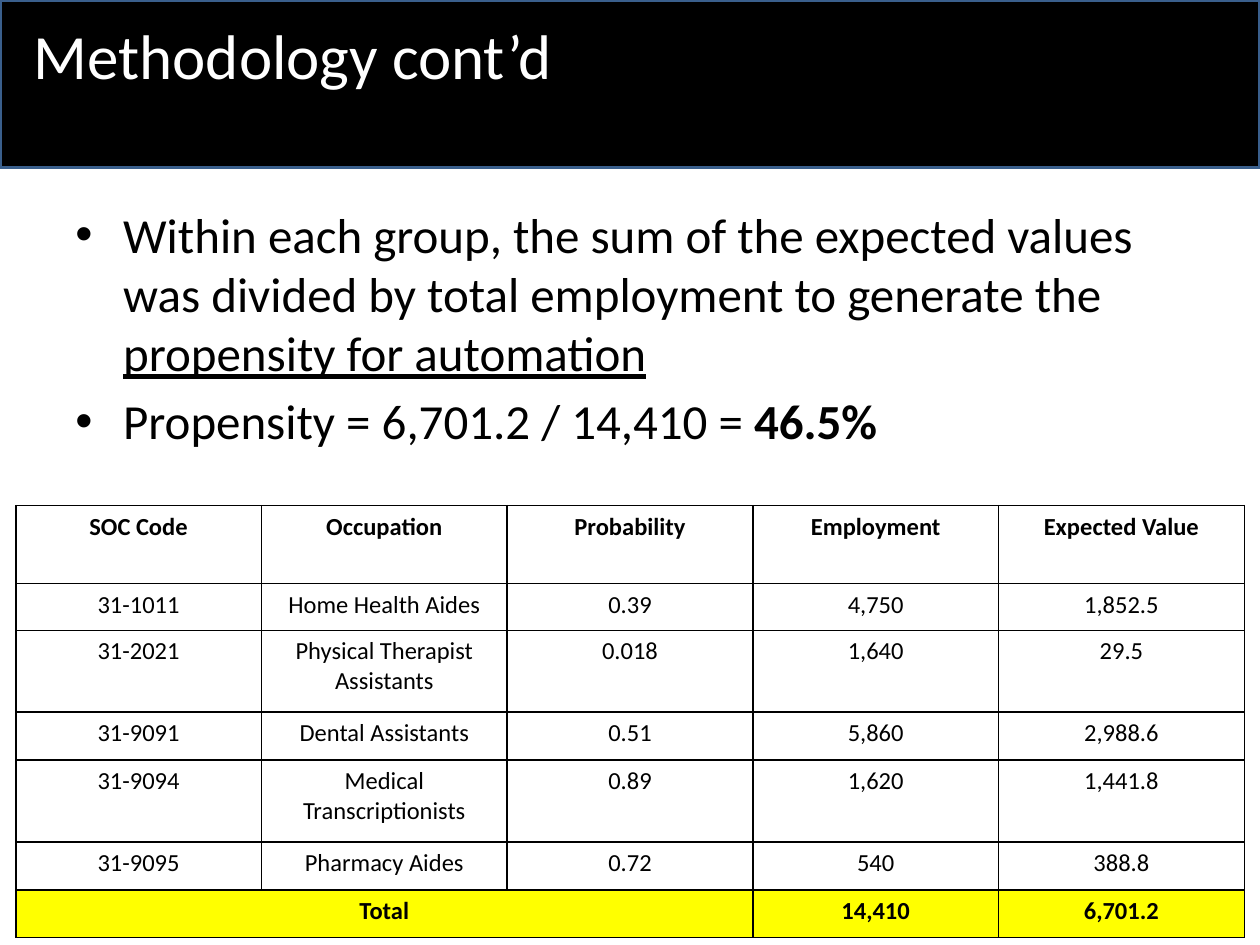
from lxml.etree import SubElement
from pptx import Presentation
from pptx.dml.color import RGBColor
from pptx.enum.shapes import MSO_SHAPE
from pptx.enum.text import PP_ALIGN
from pptx.oxml.ns import qn
from pptx.util import Inches, Pt

WIDTH, HEIGHT = 10, 7.5
BLACK, WHITE, YELLOW, BLUE = "000000", "FFFFFF", "FFFF00", "3A5F8C"
ROW_HEIGHTS = [0.62, 0.37, 0.65, 0.38, 0.65, 0.38, 0.38]
ROWS = [
    ["SOC Code", "Occupation", "Probability", "Employment", "Expected Value"],
    ["31-1011", "Home Health Aides", "0.39", "4,750", "1,852.5"],
    ["31-2021", "Physical Therapist Assistants", "0.018", "1,640", "29.5"],
    ["31-9091", "Dental Assistants", "0.51", "5,860", "2,988.6"],
    ["31-9094", "Medical Transcriptionists", "0.89", "1,620", "1,441.8"],
    ["31-9095", "Pharmacy Aides", "0.72", "540", "388.8"],
    ["", "Total", "", "14,410", "6,701.2"],
]
BULLETS = [
    [("Within each group, the sum of the expected values was divided by total "
      "employment to generate the ", None), ("propensity for automation", "underline")],
    [("Propensity = 6,701.2 / 14,410 = ", None), ("46.5%", "bold")],
]


def color(value):
    """Turn a hex string into a colour."""
    return RGBColor.from_string(value)


def place(left, top, width, height):
    """Turn shares of the slide's size into lengths."""
    return (Inches(left * WIDTH), Inches(top * HEIGHT),
            Inches(width * WIDTH), Inches(height * HEIGHT))


def style(font, size, value, bold=False):
    """Set the typeface, size, colour and weight of a font."""
    font.name, font.size, font.bold = "Calibri", Pt(size), bold
    font.color.rgb = color(value)


def add_text(page, box):
    """Add a wrapping text box and return its frame."""
    frame = page.shapes.add_textbox(*place(*box)).text_frame
    frame.word_wrap = True
    return frame


def add_header(page, box):
    """Draw the title band and the title inside it."""
    left, top, width, height = box
    band = page.shapes.add_shape(MSO_SHAPE.RECTANGLE, *place(*box))
    band.shadow.inherit = False
    band.fill.solid()
    band.fill.fore_color.rgb = color(BLACK)
    band.line.color.rgb = color(BLUE)
    band.line.width = Pt(2)
    frame = add_text(page, (left + width * 0.017, top + height * 0.06,
                            width * 0.825, height * 0.83))
    frame.text = "Methodology cont’d"
    style(frame.paragraphs[0].runs[0].font, 36, WHITE)


def add_bullets(page, box):
    """Write the bulleted explanation."""
    frame = add_text(page, box)
    for index, parts in enumerate(BULLETS):
        para = frame.add_paragraph() if index else frame.paragraphs[0]
        para.space_before = Pt(5.6 if index else 0)
        properties = para._p.get_or_add_pPr()
        properties.set("marL", str(Inches(0.38)))
        properties.set("indent", str(-Inches(0.38)))
        SubElement(properties, qn("a:buFont"), typeface="Arial")
        SubElement(properties, qn("a:buChar"), char="•")
        for text, emphasis in parts:
            span = para.add_run()
            span.text = text
            style(span.font, 28, BLACK, emphasis == "bold")
            span.font.underline = emphasis == "underline"


def add_borders(cell, hidden):
    """Rule a cell on every side except the hidden ones."""
    properties = cell._tc.get_or_add_tcPr()
    for side in "LRTB":
        line = SubElement(properties, qn(f"a:ln{side}"), w=str(Pt(1)))
        if side in hidden:
            SubElement(line, qn("a:noFill"))
        else:
            fill = SubElement(line, qn("a:solidFill"))
            SubElement(fill, qn("a:srgbClr"), val=BLACK)


def fill_cell(cell, text, bold, fill, hidden):
    """Write and format one table cell."""
    add_borders(cell, hidden)
    if fill:
        cell.fill.solid()
        cell.fill.fore_color.rgb = color(fill)
    else:
        cell.fill.background()
    cell.text_frame.text = text
    para = cell.text_frame.paragraphs[0]
    para.alignment = PP_ALIGN.CENTER
    for span in para.runs:
        style(span.font, 14, BLACK, bold)
    if not text:
        SubElement(para._p, qn("a:endParaRPr"), sz="1400")


def add_occupations(page, box):
    """Build the table of expected values with its total row."""
    table = page.shapes.add_table(len(ROWS), len(ROWS[0]), *place(*box)).table
    table.first_row = table.horz_banding = False
    for row, height in zip(table.rows, ROW_HEIGHTS):
        row.height = Inches(height)
    last = len(ROWS) - 1
    total_hidden = ["R", "LR", "L", "", ""]
    for row, values in enumerate(ROWS):
        for column, text in enumerate(values):
            total = row == last
            fill_cell(table.cell(row, column), text, row in (0, last),
                      YELLOW if total else None,
                      total_hidden[column] if total else "")


def main():
    """Build and save the slide."""
    deck = Presentation()
    deck.slide_width, deck.slide_height = Inches(WIDTH), Inches(HEIGHT)
    page = deck.slides.add_slide(deck.slide_layouts[6])
    add_header(page, (0, 0, 1, 0.1775))
    add_bullets(page, (0.05, 0.21, 0.9, 0.72))
    add_occupations(page, (0.0125, 0.535, 0.975, 0.46))
    deck.save("out.pptx")


if __name__ == "__main__":
    main()
